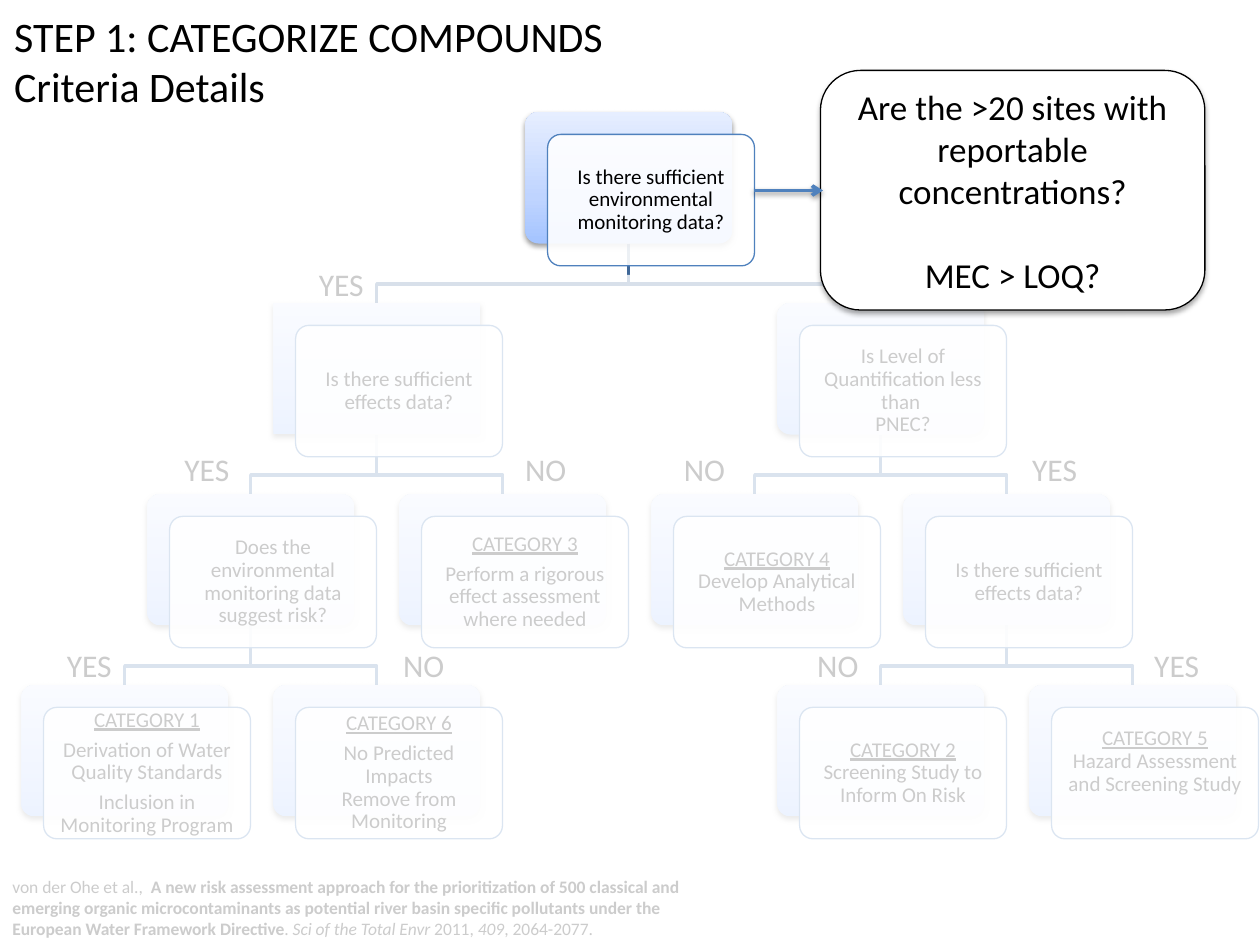
from dataclasses import dataclass
from typing import NamedTuple, Optional

from lxml.etree import SubElement
from pptx import Presentation
from pptx.dml.color import RGBColor
from pptx.enum.shapes import MSO_CONNECTOR as Connector, MSO_SHAPE as Shape
from pptx.enum.text import MSO_ANCHOR as Anchor, MSO_AUTO_SIZE as AutoSize, PP_ALIGN as Align
from pptx.oxml.ns import qn
from pptx.util import Cm, Pt

BLACK = RGBColor(0x00, 0x00, 0x00)
WHITE = RGBColor(0xFF, 0xFF, 0xFF)
BLUE = RGBColor(0x4F, 0x81, 0xBD)
TRUNK_BLUE = RGBColor(0x3F, 0x67, 0x97)
BRANCH_BLUE = RGBColor(0x48, 0x75, 0xAC)
CARD_STOPS = ((0, RGBColor(0xA4, 0xC4, 0xFF)), (35, RGBColor(0xBF, 0xD4, 0xFF)),
              (100, RGBColor(0xE6, 0xEE, 0xFF)))

# Tree grid, in centimetres
TREE_LEFT, TREE_TOP = 0.43, 2.26
COLUMN_PITCH, LEVEL_PITCH = 2.54, 3.85
CARD_W, CARD_H, FRONT_OFFSET = 4.17, 2.65, 0.45
ELBOW_DROP = 0.82
LABEL_TOPS = (0, 5.21, 8.94, 12.9)


class Run(NamedTuple):
    text: str
    underline: bool = False
    bold: bool = False
    italic: bool = False


@dataclass
class Node:
    column: int
    level: int
    paragraphs: list[list[Run]]
    parent: Optional[int] = None  # column of the node one level up
    answer: str = ""
    answer_left: float = 0
    back: Shape = Shape.ROUNDED_RECTANGLE
    lift: float = 0  # extra bottom inset

    @property
    def left(self) -> float:
        return TREE_LEFT + self.column * COLUMN_PITCH

    @property
    def top(self) -> float:
        return TREE_TOP + self.level * LEVEL_PITCH


def category(number: int) -> Run:
    return Run(f"CATEGORY {number}", underline=True)


NODES = [
    Node(4, 0, [[Run("Is there sufficient environmental monitoring data?")]]),
    Node(2, 1, [[Run("Is there sufficient effects data?")]], 4, "YES", 5.99, Shape.RECTANGLE),
    Node(1, 2, [[Run("Does the environmental monitoring data suggest risk?")]], 2, "YES", 3.28),
    Node(0, 3, [[category(1)], [Run("Derivation of Water Quality Standards")],
                [Run("Inclusion in Monitoring Program")]], 1, "YES", 0.91),
    Node(2, 3, [[category(6)], [Run("No Predicted Impacts\nRemove from Monitoring")]],
         1, "NO", 7.65),
    Node(3, 2, [[category(3)], [Run("Perform a rigorous effect assessment where needed")]],
         2, "NO", 10.11),
    Node(6, 1, [[Run("Is Level of Quantification less than \nPNEC?")]], 4),
    Node(5, 2, [[category(4), Run("\nDevelop Analytical Methods")]], 6, "NO", 13.31),
    Node(7, 2, [[Run("Is there sufficient effects data?")]], 6, "YES", 20.37),
    Node(6, 3, [[category(2), Run("\nScreening Study to Inform On Risk")]], 7, "NO", 16),
    Node(8, 3, [[category(5), Run("\nHazard Assessment and Screening Study")]],
         7, "YES", 22.83, lift=0.46),
]
CITATION = [
    Run("von der Ohe et al., "),
    Run(" A new risk assessment approach for the prioritization of 500 classical and emerging "
        "organic microcontaminants as potential river basin specific pollutants under the "
        "European Water Framework Directive", bold=True),
    Run(". "), Run("Sci of the Total Envr ", italic=True), Run("2011, "),
    Run("409", italic=True), Run(", 2064-2077."),
]


def write(frame, paragraphs: list[list[Run]], size: float, align=Align.CENTER,
          anchor=Anchor.TOP) -> None:
    frame.word_wrap = True
    frame.auto_size = AutoSize.NONE
    frame.vertical_anchor = anchor
    for index, runs in enumerate(paragraphs):
        paragraph = frame.add_paragraph() if index else frame.paragraphs[0]
        paragraph.alignment = align
        for part in runs:
            for line_index, line in enumerate(part.text.split("\n")):
                if line_index:
                    paragraph.add_line_break()
                if not line:
                    continue
                run = paragraph.add_run()
                run.text = line
                font = run.font
                font.name, font.size, font.color.rgb = "Calibri", Pt(size), BLACK
                font.underline, font.bold, font.italic = part.underline, part.bold, part.italic


def add_text(slide, left: float, top: float, width: float, height: float,
             runs: list[Run], size: float, align=Align.CENTER) -> None:
    box = slide.shapes.add_textbox(Cm(left), Cm(top), Cm(width), Cm(height))
    write(box.text_frame, [runs], size, align)


def add_panel(slide, kind: Shape, left: float, top: float, width: float, height: float,
              line: Optional[RGBColor] = None, opacity: int = 100):
    panel = slide.shapes.add_shape(kind, Cm(left), Cm(top), Cm(width), Cm(height))
    panel.shadow.inherit = False
    panel.fill.solid()
    panel.fill.fore_color.rgb = WHITE
    if opacity < 100:
        color = panel._element.spPr.find(qn("a:solidFill"))[0]
        SubElement(color, qn("a:alpha"), val=str(opacity * 1000))
    if line is None:
        panel.line.fill.background()
    else:
        panel.line.color.rgb, panel.line.width = line, Pt(0.75)
    return panel


def cast_shadow(shape, opacity: int) -> None:
    properties = shape._element.spPr
    effects = properties.find(qn("a:effectLst"))
    if effects is None:
        effects = SubElement(properties, qn("a:effectLst"))
    shadow = SubElement(effects, qn("a:outerShdw"), blurRad=str(Pt(3.1)), dist=str(Pt(1.6)),
                        dir="5400000", rotWithShape="0")
    color = SubElement(shadow, qn("a:srgbClr"), val=str(BLACK))
    SubElement(color, qn("a:alpha"), val=str(opacity * 1000))


def shade(shape) -> None:
    shape.fill.gradient()
    shape.fill.gradient_angle = 90
    stops = shape._element.spPr.find(qn("a:gradFill")).find(qn("a:gsLst"))
    for stop in list(stops):
        stops.remove(stop)
    for position, color in CARD_STOPS:
        stop = SubElement(stops, qn("a:gs"), pos=str(position * 1000))
        SubElement(stop, qn("a:srgbClr"), val=str(color))


def add_branch(slide, parent: Node, child: Node) -> None:
    start_x, end_x = (Cm(node.left + CARD_W / 2) for node in (parent, child))
    start_y = Cm(parent.top + CARD_H)
    elbow_y = start_y + Cm(ELBOW_DROP)
    builder = slide.shapes.build_freeform(start_x, start_y)
    builder.add_line_segments([(start_x, elbow_y), (end_x, elbow_y), (end_x, Cm(child.top))],
                              close=False)
    branch = builder.convert_to_shape()
    branch.shadow.inherit = False
    branch.fill.background()
    branch.line.color.rgb = TRUNK_BLUE if child.level == 1 else BRANCH_BLUE
    branch.line.width = Pt(2)


def add_card(slide, node: Node) -> None:
    back = add_panel(slide, node.back, node.left, node.top, CARD_W, CARD_H)
    shade(back)
    cast_shadow(back, 38)
    front = add_panel(slide, Shape.ROUNDED_RECTANGLE, node.left + FRONT_OFFSET,
                      node.top + FRONT_OFFSET, CARD_W, CARD_H, BLUE, 90)
    for card in (back, front):
        if len(card.adjustments):
            card.adjustments[0] = 0.1
    frame = front.text_frame
    frame.margin_left = frame.margin_right = frame.margin_top = Cm(0.2)
    frame.margin_bottom = Cm(0.2 + node.lift)
    write(frame, node.paragraphs, 12, anchor=Anchor.MIDDLE)
    for paragraph in frame.paragraphs:
        paragraph.line_spacing, paragraph.space_after = 0.9, Pt(4.2)


def main() -> None:
    deck = Presentation()
    deck.slide_width, deck.slide_height = Cm(25.4), Cm(19.05)
    slide = deck.slides.add_slide(deck.slide_layouts[5])

    # Title
    title = slide.shapes.title
    title.left, title.top, title.width, title.height = Cm(0.03), Cm(0.08), Cm(12.9), Cm(2.31)
    write(title.text_frame, [[Run("STEP 1: CATEGORIZE COMPOUNDS\nCriteria Details")]],
          24, Align.LEFT)

    # Citation
    add_text(slide, 0, 17.53, 14.17, 1.55, CITATION, 10, Align.LEFT)

    # Decision tree: branches, cards, answers
    by_place = {(node.column, node.level): node for node in NODES}
    for node in NODES:
        if node.parent is not None:
            add_branch(slide, by_place[node.parent, node.level - 1], node)
    for node in NODES:
        add_card(slide, node)
    for node in NODES:
        if node.answer:
            add_text(slide, node.answer_left, LABEL_TOPS[node.level], 1.78, 1.02,
                     [Run(node.answer)], 18)

    # Veil that fades the tree below the first question
    add_panel(slide, Shape.RECTANGLE, 0, 5.54, 25.4, 13.51, opacity=80)

    # Criteria callout and its arrow
    criteria = add_panel(slide, Shape.ROUNDED_RECTANGLE, 16.54, 1.42, 7.75, 4.83, BLACK)
    cast_shadow(criteria, 35)
    write(criteria.text_frame, [[Run("Are the >20 sites with reportable concentrations?")],
                                [Run("MEC > LOQ?")]], 20, anchor=Anchor.MIDDLE)
    criteria.text_frame.paragraphs[1].space_before = Pt(24)
    arrow = slide.shapes.add_connector(Connector.STRAIGHT, Cm(15.19), Cm(3.84),
                                       Cm(16.59), Cm(3.84))
    arrow.line.color.rgb, arrow.line.width = BLUE, Pt(2)
    SubElement(arrow.line._get_or_add_ln(), qn("a:tailEnd"), type="arrow")
    cast_shadow(arrow, 38)

    deck.save("out.pptx")


if __name__ == "__main__":
    main()
